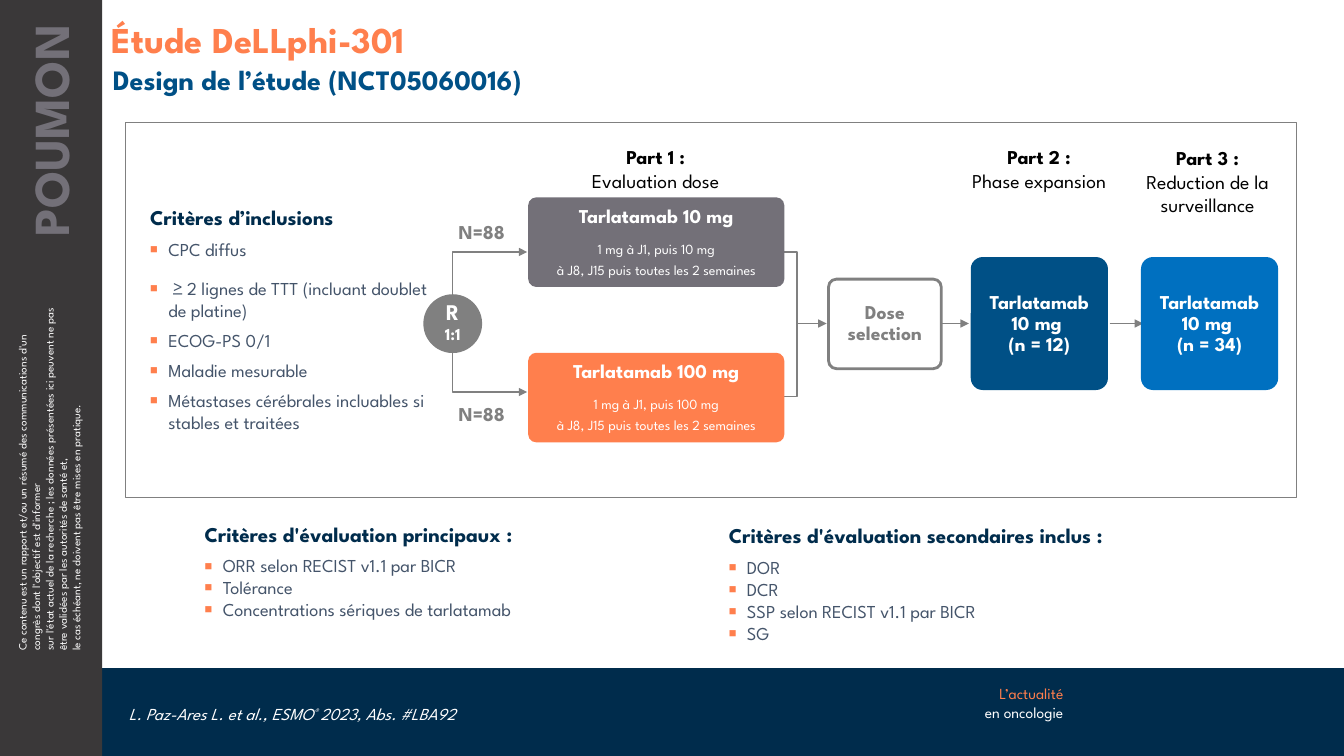
from lxml import etree
from pptx import Presentation
from pptx.dml.color import RGBColor
from pptx.enum import shapes, text
from pptx.oxml import ns
from pptx.util import Pt

FONT = "League Spartan"
ORANGE = RGBColor(0xFF, 0x7F, 0x4D)
NAVY = RGBColor(0x00, 0x2C, 0x4C)
BLUE = RGBColor(0x00, 0x50, 0x86)
BRIGHT = RGBColor(0x00, 0x70, 0xC0)
SLATE = RGBColor(0x44, 0x54, 0x6A)
GREY = RGBColor(0x80, 0x80, 0x80)
MAUVE = RGBColor(0x73, 0x70, 0x78)
CHARCOAL = RGBColor(0x3A, 0x38, 0x39)
WHITE = RGBColor(0xFF, 0xFF, 0xFF)
BLACK = RGBColor(0, 0, 0)

CENTER, RIGHT = text.PP_ALIGN.CENTER, text.PP_ALIGN.RIGHT
TOP, MIDDLE, BOTTOM = text.MSO_ANCHOR.TOP, text.MSO_ANCHOR.MIDDLE, text.MSO_ANCHOR.BOTTOM
KIND = shapes.MSO_SHAPE

TITLE = "Étude DeLLphi-301"
SUBTITLE = "Design de l’étude (NCT05060016)"
TOPIC = "POUMON"
DISCLAIMER = (
    "Ce contenu est un rapport et/ou un résumé des communications d'un congrès dont l'objectif est d'informer \n"
    "sur l'état actuel de la recherche ; les données présentées ici peuvent ne pas être validées par les "
    "autorités de santé et, \nle cas échéant, ne doivent pas être mises en pratique.")
CITATION = [("L. Paz-Ares L. et al., ESMO", 0), ("® ", 30000), ("2023, Abs. #LBA92", 0)]
SERIES = ("L’actualité\n", "en oncologie")
CRITERIA = [
    (2, (101.5, 140.4, 211.7, 200), "Critères d’inclusions", 0, 6,
     [("CPC diffus", 6), (" ≥ 2 lignes de TTT (incluant doublet de platine)", 6), ("ECOG-PS 0/1", 0),
      ("Maladie mesurable", 0), ("Métastases cérébrales incluables si stables et traitées", 0)]),
    (3, (140.4, 366.5, 348.5, 90.7), "Critères d'évaluation principaux :", 6, 0,
     [("ORR selon RECIST v1.1 par BICR", 0), ("Tolérance", 0), ("Concentrations sériques de tarlatamab", 0)]),
    (4, (514.8, 367.5, 440, 100.8), "Critères d'évaluation secondaires inclus :", 6, 0,
     [("DOR", 0), ("DCR", 0), ("SSP selon RECIST v1.1 par BICR", 0), ("SG", 0)]),
]
ARMS = [("Tarlatamab 10 mg", "1 mg à J1, puis 10 mg", MAUVE, 141, 157),
        ("Tarlatamab 100 mg", "1 mg à J1, puis 100 mg", ORANGE, 252, 287.3)]
SCHEDULE = "à J8, J15 puis toutes les 2 semaines"
ARM_SIZE = "N=88"
PARTS = [("Part 1 :", "Evaluation dose", 414, 103.7, 108.7),
         ("Part 2 :", "Phase expansion", 684.7, 103.7, 115.2),
         ("Part 3 :", "Reduction de la surveillance", 813.6, 104.4, 98)]
STAGES = [("Dose selection", WHITE, GREY, (591.8, 199.4, 80.6, 64)),
          ("Tarlatamab 10 mg \n(n = 12)", BLUE, WHITE, (693.4, 183.6, 98, 95)),
          ("Tarlatamab 10 mg \n(n = 34)", BRIGHT, WHITE, (815, 183.6, 98, 95))]
ARROWS = [(668, 692), (792.7, 816.5), (570.2, 590.4)]
BRACKETS = [((323.3, 180, 53.3, 100), 0), ((505.4, 180, 64, 103), 180)]
FLOW_Y = 231.1

deck = Presentation()
deck.slide_width, deck.slide_height = Pt(960), Pt(540)
slide = deck.slides.add_slide(deck.slide_layouts[4])


def place(shape, box):
    shape.left, shape.top, shape.width, shape.height = map(Pt, box)


def frame_of(shape, insets=(7.2, 3.6, 7.2, 3.6), anchor=TOP, wrap=True):
    frame = shape.text_frame
    frame.auto_size = text.MSO_AUTO_SIZE.NONE
    frame.word_wrap = wrap
    frame.vertical_anchor = anchor
    frame.margin_left, frame.margin_top, frame.margin_right, frame.margin_bottom = map(Pt, insets)
    return frame


def add_run(para, words, size, colour, bold=False, italic=False):
    for i, line in enumerate(words.split("\n")):
        if i:
            para.add_line_break()
        if line:
            run = para.add_run()
            run.text = line
            font = run.font
            font.name, font.size, font.bold, font.italic = FONT, Pt(size), bold, italic
            font.color.rgb = colour
    return run


def add_para(frame, runs, align=None, spacing=1.0, before=0, after=0, bullet=False):
    para = frame.paragraphs[0]
    if para.runs:
        para = frame.add_paragraph()
    props = para._p.get_or_add_pPr()
    props.set("marL", str(Pt(13) if bullet else 0))
    props.set("indent", str(-Pt(13) if bullet else 0))
    if bullet:
        colour = etree.SubElement(props, ns.qn("a:buClr"))
        etree.SubElement(colour, ns.qn("a:srgbClr")).set("val", str(ORANGE))
        etree.SubElement(props, ns.qn("a:buSzPct")).set("val", "70000")
        etree.SubElement(props, ns.qn("a:buChar")).set("char", "■")
    else:
        etree.SubElement(props, ns.qn("a:buNone"))
    para.alignment = align
    para.line_spacing = spacing
    para.space_before, para.space_after = Pt(before), Pt(after)
    for run in runs:
        add_run(para, *run)
    return para


def add_block(kind, box, fill=None, line=None, width=1.0):
    block = slide.shapes.add_shape(kind, *map(Pt, box))
    block.shadow.inherit = False
    if fill is None:
        block.fill.background()
    else:
        block.fill.solid()
        block.fill.fore_color.rgb = fill
    if line is None:
        block.line.fill.background()
    else:
        block.line.color.rgb = line
        block.line.width = Pt(width)
    return block


def add_label(box, runs, insets=(7.2, 3.6, 7.2, 3.6), align=None, anchor=TOP, wrap=True, turn=0):
    label = slide.shapes.add_textbox(*map(Pt, box))
    label.rotation = turn
    add_para(frame_of(label, insets, anchor, wrap), runs, align)
    return label


def add_heads(shape, *ends):
    outline = shape.element.spPr.find(ns.qn("a:ln"))
    for end in ends:
        etree.SubElement(outline, ns.qn("a:" + end)).set("type", "triangle")


def add_card(box, fill, paragraphs, line=None):
    card = add_block(KIND.ROUNDED_RECTANGLE, box, fill, line, 2)
    card.adjustments[0] = 0.09
    frame = frame_of(card, (5.76,) * 4, MIDDLE)
    for i, run in enumerate(paragraphs):
        add_para(frame, [run], CENTER, Pt(15), after=0 if i else 6)


add_block(KIND.RECTANGLE, (73, 477.3, 887, 62.7), NAVY)
add_block(KIND.RECTANGLE, (0, 0, 73, 540), CHARCOAL)
add_label((-94.3, 314.6, 259.2, 55.4), [(DISCLAIMER, 8, WHITE)], turn=270)
add_label((648.7, 485.3, 118, 34), [(SERIES[0], 11, ORANGE), (SERIES[1], 11, WHITE)], align=RIGHT)
add_label((-74.9, 85, 221, 51), [(TOPIC, 36, MAUVE, True)], (7.2, 3.6, 17.3, 3.6), RIGHT, turn=270)

for start, end in ARROWS:
    arrow = slide.shapes.add_connector(shapes.MSO_CONNECTOR.STRAIGHT, Pt(start), Pt(FLOW_Y), Pt(end), Pt(FLOW_Y))
    arrow.line.color.rgb = GREY
    arrow.line.width = Pt(1)
    add_heads(arrow, "tailEnd")
    etree.SubElement(arrow.element.spPr, ns.qn("a:effectLst"))
for box, turn in BRACKETS:
    bracket = add_block(KIND.LEFT_BRACKET, box, line=GREY)
    bracket.adjustments[0] = 0
    bracket.rotation = turn
    add_heads(bracket, "headEnd", "tailEnd")

heading = slide.shapes.title
place(heading, (72.7, 12.2, 877, 28.8))
add_para(frame_of(heading), [(TITLE, 26, ORANGE, True)], text.PP_ALIGN.LEFT, 0.9)
subheading = slide.placeholders[1]
place(subheading, (73.4, 41, 886, 36))
add_para(frame_of(subheading), [(SUBTITLE, 20, BLUE, True)])

citation = slide.shapes.add_textbox(Pt(85), Pt(479.5), Pt(541.4), Pt(60.5))
credit = add_para(frame_of(citation, anchor=MIDDLE), [])
for words, raised in CITATION:
    part = add_run(credit, words, 12, WHITE, italic=True)
    if raised:
        part.font._element.set("baseline", str(raised))

add_block(KIND.RECTANGLE, (90, 87.8, 836, 267.8), line=GREY, width=0.75)

for idx, box, head, head_after, after, items in CRITERIA:
    criteria = slide.placeholders[idx]
    place(criteria, box)
    frame = frame_of(criteria, (5.76,) * 4)
    add_para(frame, [(head, 15, NAVY, True)], after=head_after)
    for item, before in items:
        add_para(frame, [(item, 13, SLATE)], before=before, after=after, bullet=True)

randomisation = add_block(KIND.OVAL, (302.4, 210.2, 42, 42), GREY)
add_para(frame_of(randomisation, (0.72,) * 4, BOTTOM),
         [("R\n", 16, WHITE, True), ("1:1", 12, WHITE, True)], CENTER, Pt(13))

for drug, dose, colour, top, count_top in ARMS:
    add_card((377.3, top, 183, 64), colour,
             [(drug, 14, WHITE, True), (dose, 10, WHITE), (SCHEDULE, 10, WHITE)])
    add_label((327.6, count_top, 34.6, 20.9), [(ARM_SIZE, 14, GREY, True)], (0, 0, 0, 3.6), wrap=False)

for words, fill, colour, box in STAGES:
    add_card(box, fill, [(words, 14, colour, True)], GREY if fill == WHITE else None)

for name, aim, left, top, width in PARTS:
    part = add_label((left, top, width, 54), [(name, 14, BLACK, True)], (0, 0, 0, 3.6), CENTER)
    add_para(part.text_frame, [(aim, 14, BLACK)], CENTER)

deck.save("out.pptx")
